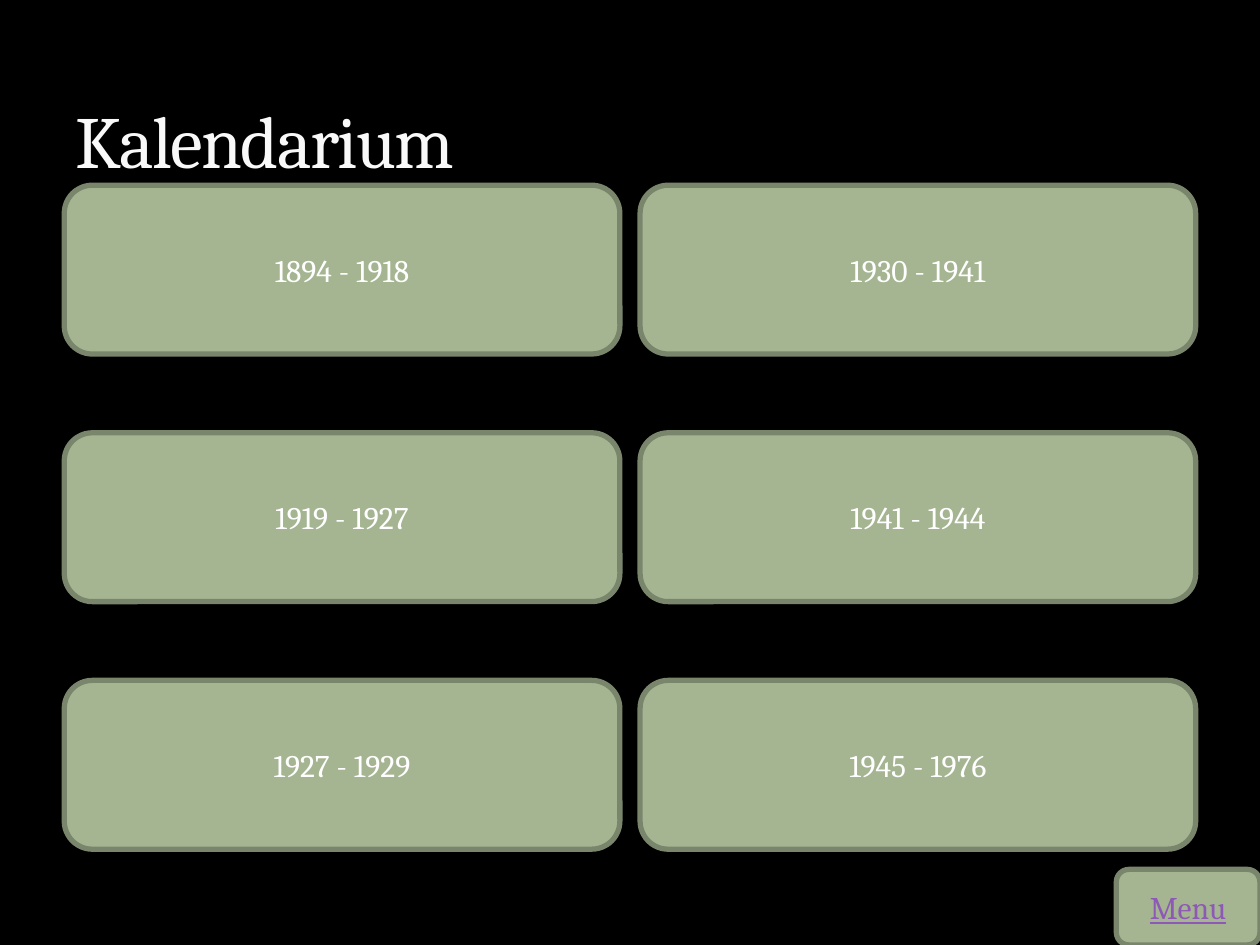
from dataclasses import dataclass

from lxml.etree import SubElement
from pptx import Presentation
from pptx.dml.color import RGBColor
from pptx.enum.shapes import MSO_SHAPE as Preset
from pptx.enum.text import MSO_ANCHOR as Anchor, PP_ALIGN as Align
from pptx.oxml.ns import qn
from pptx.slide import Slide
from pptx.text.text import _Run as Run
from pptx.util import Inches, Pt

BLACK = RGBColor(0x00, 0x00, 0x00)
WHITE = RGBColor(0xFF, 0xFF, 0xFF)
OFF_WHITE = RGBColor(0xF9, 0xF9, 0xF9)
SAGE = RGBColor(0xA5, 0xB5, 0x92)
DARK_SAGE = RGBColor(0x7A, 0x86, 0x6C)
DEEP_OLIVE = RGBColor(0x3C, 0x44, 0x22)
PURPLE = RGBColor(0x8E, 0x58, 0xB6)
FONT = "Cambria"

GRID_LEFT, GRID_TOP = 0.51, 1.47
COLUMN_STEP, ROW_STEP = 4.57, 1.965
BUTTON_WIDTH, BUTTON_HEIGHT = 4.41, 1.34
PERIOD_COLUMNS = (
    ("1894 - 1918", "1919 - 1927", "1927 - 1929"),
    ("1930 - 1941", "1941 - 1944", "1945 - 1976"),
)


@dataclass(frozen=True)
class Button:
    label: str
    left: float
    top: float
    width: float = BUTTON_WIDTH
    height: float = BUTTON_HEIGHT
    color: RGBColor = WHITE
    underline: bool = False


def style_run(run: Run, size: float, color: RGBColor) -> None:
    run.font.name = FONT
    run.font.size = Pt(size)
    run.font.color.rgb = color


def outline_run(run: Run, color: RGBColor, width: float, alpha: int) -> None:
    properties = run._r.get_or_add_rPr()
    line = SubElement(properties, qn("a:ln"), w=str(Pt(width)))
    fill = SubElement(line, qn("a:solidFill"))
    tone = SubElement(fill, qn("a:srgbClr"), val=str(color))
    SubElement(tone, qn("a:alpha"), val=str(alpha * 1000))
    properties.insert(0, line)


def draw_title(slide: Slide, text: str) -> None:
    box = slide.shapes.add_textbox(Inches(0.5), Inches(0.17), Inches(9), Inches(1.33))
    frame = box.text_frame
    frame.word_wrap = True
    frame.vertical_anchor = Anchor.BOTTOM
    run = frame.paragraphs[0].add_run()
    run.text = text
    style_run(run, 42, OFF_WHITE)
    run._r.get_or_add_rPr().set("spc", "-100")
    outline_run(run, DEEP_OLIVE, 0.25, 25)


def draw_button(slide: Slide, button: Button) -> None:
    shape = slide.shapes.add_shape(
        Preset.ROUNDED_RECTANGLE,
        Inches(button.left),
        Inches(button.top),
        Inches(button.width),
        Inches(button.height),
    )
    shape.shadow.inherit = False
    shape.fill.solid()
    shape.fill.fore_color.rgb = SAGE
    shape.line.color.rgb = DARK_SAGE
    shape.line.width = Pt(3)
    frame = shape.text_frame
    frame.word_wrap = True
    frame.vertical_anchor = Anchor.MIDDLE
    paragraph = frame.paragraphs[0]
    paragraph.alignment = Align.CENTER
    run = paragraph.add_run()
    run.text = button.label
    style_run(run, 18, button.color)
    if button.underline:
        run.font.underline = True


def main() -> None:
    presentation = Presentation()
    presentation.slide_width = Inches(10)
    presentation.slide_height = Inches(7.5)
    slide = presentation.slides.add_slide(presentation.slide_layouts[6])
    slide.background.fill.solid()
    slide.background.fill.fore_color.rgb = BLACK

    draw_title(slide, "Kalendarium")
    for column, periods in enumerate(PERIOD_COLUMNS):
        for row, period in enumerate(periods):
            left = GRID_LEFT + column * COLUMN_STEP
            top = GRID_TOP + row * ROW_STEP
            draw_button(slide, Button(period, left, top))
    draw_button(slide, Button("Menu", 8.86, 6.9, 1.14, 0.6, PURPLE, True))

    presentation.save("out.pptx")


if __name__ == "__main__":
    main()
